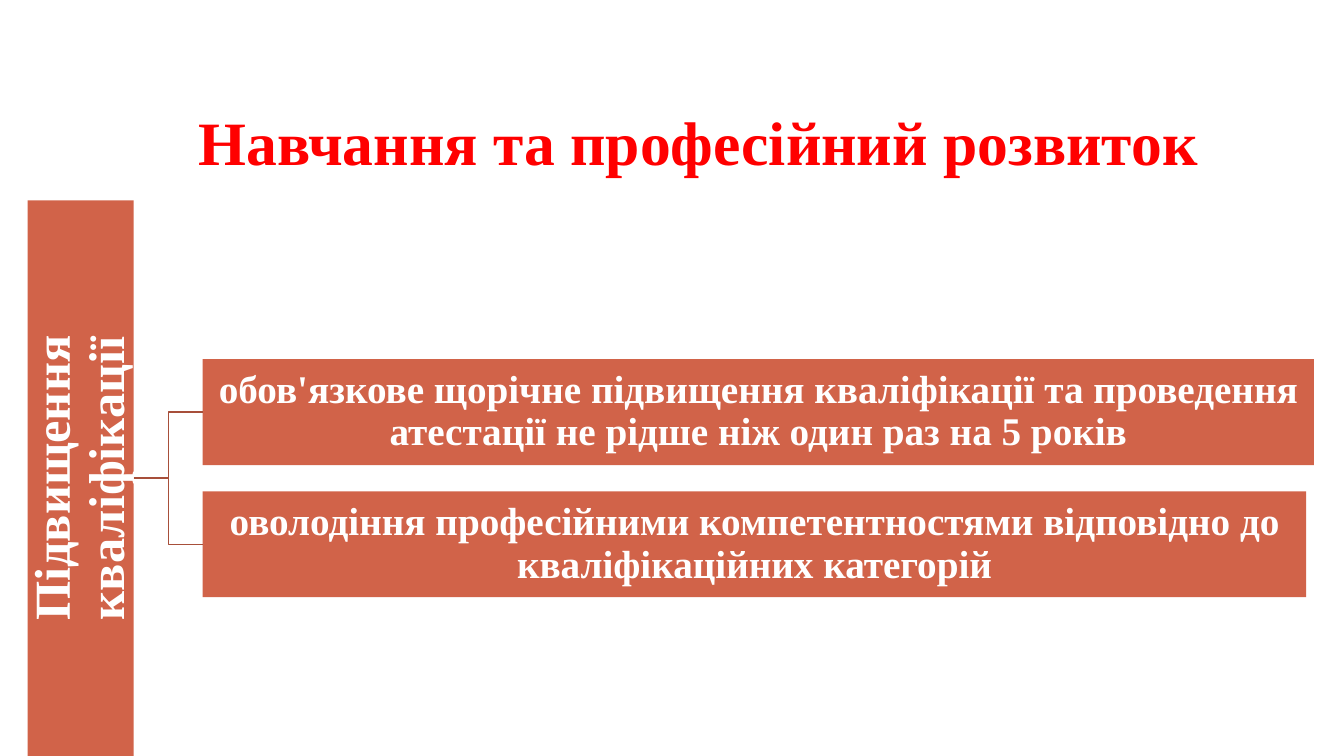
from lxml.etree import SubElement
from pptx import Presentation
from pptx.dml.color import RGBColor
from pptx.enum.shapes import MSO_CONNECTOR, MSO_SHAPE
from pptx.enum.text import MSO_ANCHOR, PP_ALIGN
from pptx.oxml.ns import qn
from pptx.util import Cm, Pt

RED = RGBColor(0xFF, 0x00, 0x00)
WHITE = RGBColor(0xFF, 0xFF, 0xFF)
TERRACOTTA = RGBColor(0xD1, 0x63, 0x49)
BROWN = RGBColor(0xA7, 0x4F, 0x3A)


class HierarchySlide:
    """Holds the slide and its style; one method per kind of element."""

    font_name = "Times New Roman"

    def __init__(self, deck):
        self.page = deck.slides.add_slide(deck.slide_layouts[5])

    def set_text(self, frame, text, size, color, align):
        frame.word_wrap = True
        para = frame.paragraphs[0]
        para.text = text
        para.alignment = align
        para.line_spacing = 0.9
        para.font.name = self.font_name
        para.font.size = Pt(size)
        para.font.bold = True
        para.font.color.rgb = color

    def title(self, text, left, top, width, height):
        box = self.page.shapes.title
        box.left, box.top, box.width, box.height = Cm(left), Cm(top), Cm(width), Cm(height)
        frame = box.text_frame
        frame.vertical_anchor = MSO_ANCHOR.TOP
        frame.margin_top = Cm(0.4)
        self.set_text(frame, text, 44, RED, PP_ALIGN.LEFT)

    def block(self, text, center_x, center_y, width, height, size, rotation=0):
        box = self.page.shapes.add_shape(
            MSO_SHAPE.RECTANGLE, Cm(center_x - width / 2), Cm(center_y - height / 2),
            Cm(width), Cm(height))
        box.rotation = rotation
        box.shadow.inherit = False
        box.fill.solid()
        box.fill.fore_color.rgb = TERRACOTTA
        box.line.fill.background()
        frame = box.text_frame
        frame.vertical_anchor = MSO_ANCHOR.MIDDLE
        frame.margin_left = frame.margin_right = Cm(0.05)
        frame.margin_top = frame.margin_bottom = Cm(0.05)
        self.set_text(frame, text, size, WHITE, PP_ALIGN.CENTER)
        return box

    def branch(self, start_x, start_y, box):
        line = self.page.shapes.add_connector(
            MSO_CONNECTOR.ELBOW, Cm(start_x), Cm(start_y),
            box.left, box.top + box.height // 2)
        line.end_connect(box, 1)
        line.line.color.rgb = BROWN
        line.line.width = Pt(1)
        SubElement(line._element.spPr, qn("a:effectLst"))


def main():
    deck = Presentation()
    deck.slide_width, deck.slide_height = Cm(33.87), Cm(19.05)
    slide = HierarchySlide(deck)

    # Title
    slide.title("Навчання та професійний розвиток", 4.75, 2.44, 27.94, 4.04)

    # Root bar, read from bottom to top
    thickness, bar_length = 2.67, 14
    bar_left, middle = 0.7, 12.05
    slide.block("Підвищення кваліфікації", bar_left + thickness / 2, middle,
                bar_length, thickness, 36, rotation=270)

    # Branches, spread evenly about the middle of the bar
    branch_left, pitch = 5.11, 3.33
    branches = [
        ("обов'язкове щорічне підвищення кваліфікації та проведення "
         "атестації не рідше ніж один раз на 5 років", 28),
        ("оволодіння професійними компетентностями відповідно до "
         "кваліфікаційних категорій", 27.81),
    ]
    for index, (text, width) in enumerate(branches):
        center_y = middle + (index - (len(branches) - 1) / 2) * pitch
        box = slide.block(text, branch_left + width / 2, center_y, width, thickness, 28)
        slide.branch(bar_left + thickness, middle, box)

    deck.save("out.pptx")


if __name__ == "__main__":
    main()
